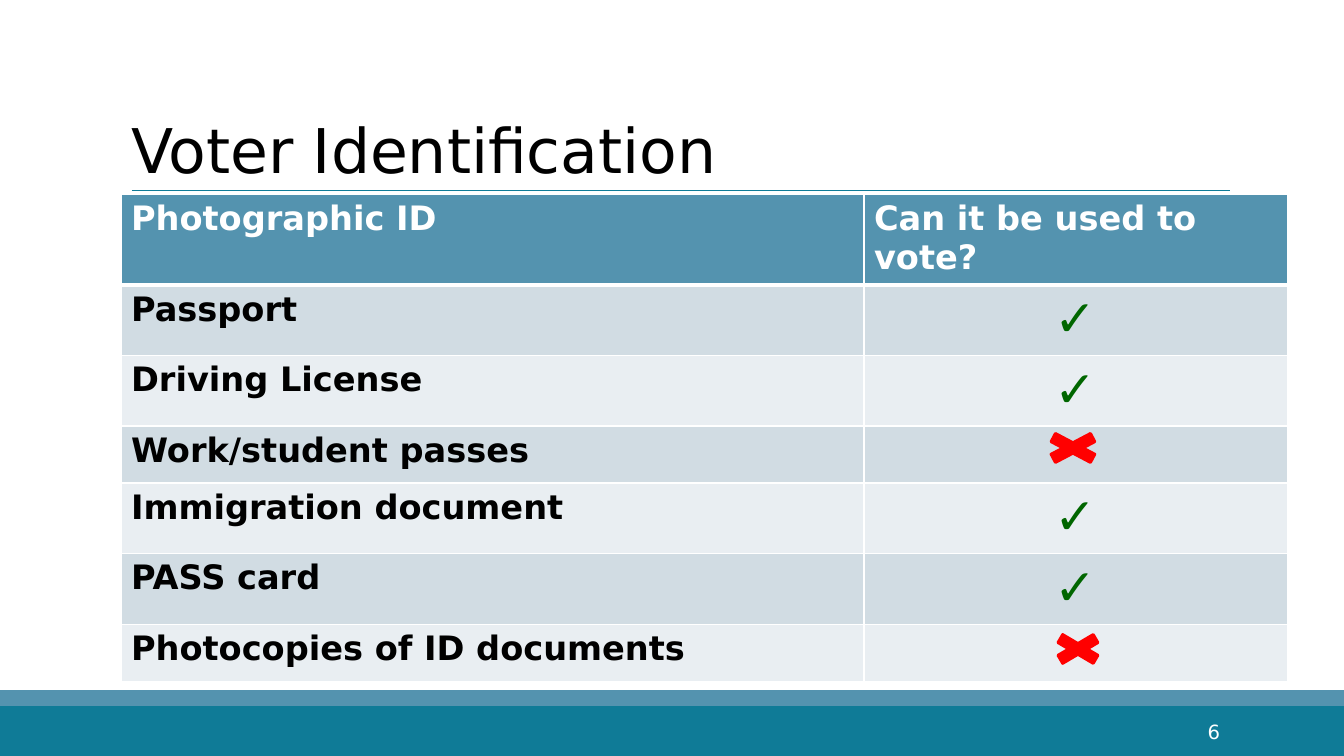
import lxml.etree
import pptx
import pptx.dml.color
import pptx.enum.shapes
import pptx.enum.text
import pptx.oxml.ns
import pptx.util

PX = 914400 / 100.8
FONT = "DejaVu Sans"
TEAL = pptx.dml.color.RGBColor(0x0F, 0x7B, 0x97)
BLUE = pptx.dml.color.RGBColor(0x54, 0x93, 0xAF)
DARK_BAND = pptx.dml.color.RGBColor(0xD1, 0xDC, 0xE3)
LIGHT_BAND = pptx.dml.color.RGBColor(0xE9, 0xEE, 0xF2)
WHITE = pptx.dml.color.RGBColor(0xFF, 0xFF, 0xFF)
BLACK = pptx.dml.color.RGBColor(0x00, 0x00, 0x00)
GREEN = pptx.dml.color.RGBColor(0x00, 0x66, 0x00)
RED = pptx.dml.color.RGBColor(0xFF, 0x00, 0x00)
PP_ALIGN = pptx.enum.text.PP_ALIGN
MSO_SHAPE = pptx.enum.shapes.MSO_SHAPE


def px(*lengths):
    """Turn pixel lengths into a list of EMU lengths."""
    return [pptx.util.Emu(round(length * PX)) for length in lengths]


def add_text(text_frame, text, size, color, bold=False, alignment=PP_ALIGN.LEFT):
    paragraph = text_frame.paragraphs[0]
    paragraph.alignment = alignment
    run = paragraph.add_run()
    run.text = text
    run.font.name = FONT
    run.font.size = pptx.util.Pt(size)
    run.font.bold = bold
    run.font.color.rgb = color
    return paragraph


presentation = pptx.Presentation()
presentation.slide_width, presentation.slide_height = px(1344, 756)
slide = presentation.slides.add_slide(presentation.slide_layouts[5])

# Footer bands and slide number
for top, height, color in [(706, 50, TEAL), (690, 16, BLUE)]:
    band = slide.shapes.add_shape(MSO_SHAPE.RECTANGLE, *px(0, top, 1344, height))
    band.shadow.inherit = False
    band.fill.solid()
    band.fill.fore_color.rgb = color
    band.line.fill.background()

number_box = slide.shapes.add_textbox(*px(999, 715, 231, 34))
number_box.text_frame.word_wrap = True
add_text(number_box.text_frame, "6", 14, WHITE, alignment=PP_ALIGN.RIGHT)

# Title and the rule below it
title = slide.shapes.title
title.left, title.top, title.width, title.height = px(121, 53, 1109, 138)
title.text_frame.auto_size = pptx.enum.text.MSO_AUTO_SIZE.NONE
title.text_frame.vertical_anchor = pptx.enum.text.MSO_ANCHOR.BOTTOM
add_text(title.text_frame, "Voter Identification", 44, BLACK).line_spacing = 0.85

title_rule = slide.shapes.add_connector(
    pptx.enum.shapes.MSO_CONNECTOR.STRAIGHT, *px(132, 191, 1230, 191))
title_rule.line.color.rgb = TEAL
title_rule.line.width = pptx.util.Pt(0.75)
lxml.etree.SubElement(title_rule.element.spPr, pptx.oxml.ns.qn("a:effectLst"))

# Table of documents
rows = [
    ("Photographic ID", "Can it be used to vote?"),
    ("Passport", "✓"),
    ("Driving License", "✓"),
    ("Work/student passes", ""),
    ("Immigration document", "✓"),
    ("PASS card", "✓"),
    ("Photocopies of ID documents", ""),
]
table = slide.shapes.add_table(len(rows), 2, *px(121, 194, 1167, 395)).table
table.columns[0].width, table.columns[1].width = px(743, 424)

for row_index, texts in enumerate(rows):
    is_header = row_index == 0
    table.rows[row_index].height = px(53 if is_header else 57)[0]
    if is_header:
        fill_color = BLUE
    else:
        fill_color = DARK_BAND if row_index % 2 else LIGHT_BAND
    for column_index, text in enumerate(texts):
        cell = table.cell(row_index, column_index)
        properties = cell._tc.get_or_add_tcPr()
        for side in ("L", "R", "T", "B"):
            thick = (is_header and side == "B") or (row_index == 1 and side == "T")
            border = lxml.etree.SubElement(
                properties, pptx.oxml.ns.qn(f"a:ln{side}"),
                w=str(pptx.util.Pt(3 if thick else 1)))
            border_fill = lxml.etree.SubElement(border, pptx.oxml.ns.qn("a:solidFill"))
            lxml.etree.SubElement(
                border_fill, pptx.oxml.ns.qn("a:srgbClr"), val=str(WHITE))
        cell.fill.solid()
        cell.fill.fore_color.rgb = fill_color
        if text == "✓":
            add_text(cell.text_frame, text, 36, GREEN, True, PP_ALIGN.CENTER)
        elif text:
            add_text(cell.text_frame, text, 24, WHITE if is_header else BLACK, True)

# Crosses for the documents that are not accepted
for left, top, width in [(1035, 428, 76), (1044, 629, 68)]:
    cross = slide.shapes.add_shape(MSO_SHAPE.MATH_MULTIPLY, *px(left, top, width, 40))
    cross.shadow.inherit = False
    cross.fill.solid()
    cross.fill.fore_color.rgb = RED
    cross.line.color.rgb = RED
    cross.line.width = pptx.util.Pt(2)

presentation.save("out.pptx")
